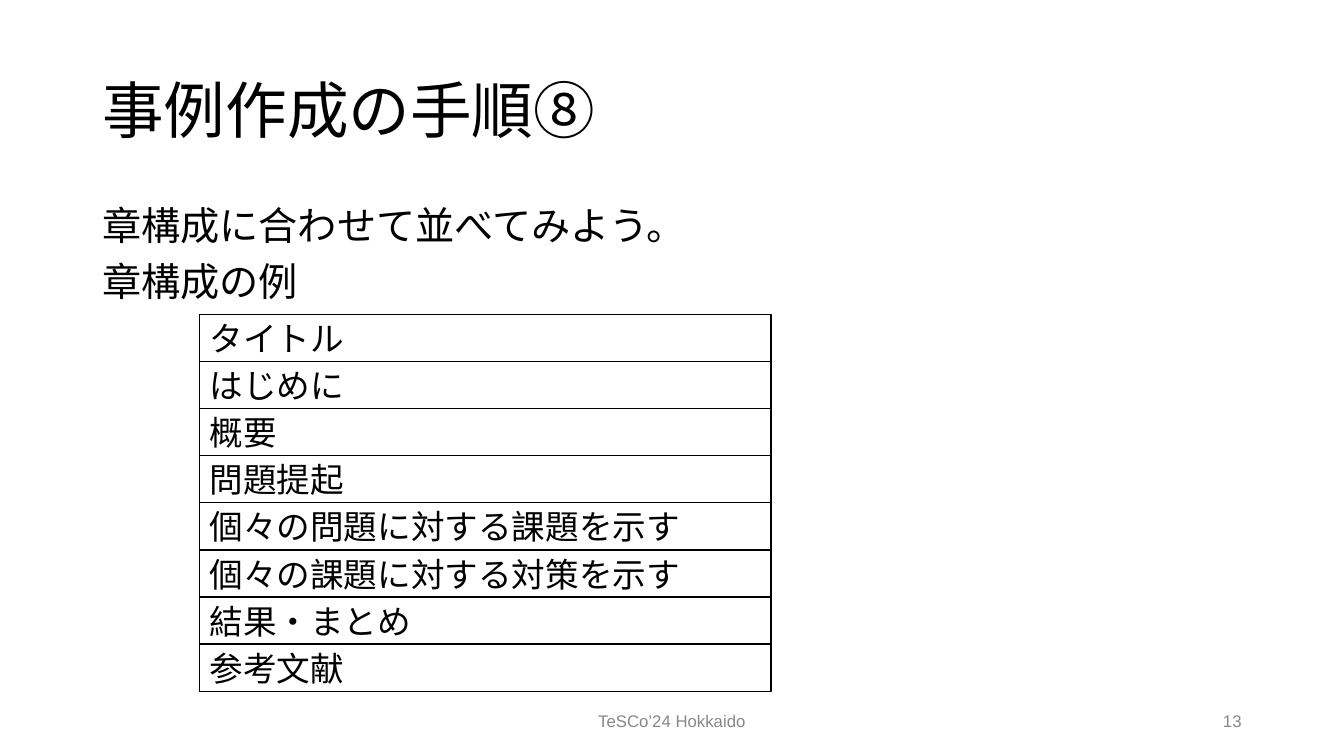
from pptx import Presentation
from pptx.dml.color import RGBColor
from pptx.enum.shapes import MSO_SHAPE
from pptx.enum.text import MSO_ANCHOR, PP_ALIGN
from pptx.util import Pt

LEFT, CENTER, RIGHT = PP_ALIGN.LEFT, PP_ALIGN.CENTER, PP_ALIGN.RIGHT
TOP, MIDDLE = MSO_ANCHOR.TOP, MSO_ANCHOR.MIDDLE
RECTANGLE = MSO_SHAPE.RECTANGLE

# Content
TITLE = "事例作成の手順⑧"
BODY = ["章構成に合わせて並べてみよう。", "章構成の例"]
CHAPTERS = [
    "タイトル",
    "はじめに",
    "概要",
    "問題提起",
    "個々の問題に対する課題を示す",
    "個々の課題に対する対策を示す",
    "結果・まとめ",
    "参考文献",
]
FOOTER = "TeSCo’24 Hokkaido"
PAGE_NUMBER = "13"

COLORS = {"text": "000000", "box": "FFFFFF", "line": "000000", "footer": "888888"}
FONT = "Arial"

# Layout in points
MARGIN, CONTENT_WIDTH = 66, 828
CHAPTER_LEFT, CHAPTER_TOP = 142.56, 224.64
CHAPTER_WIDTH, CHAPTER_HEIGHT, CHAPTER_PITCH = 408.24, 33.84, 33.63
FOOTER_TOP, FOOTER_HEIGHT = 500.4, 28.8


def color(name):
    return RGBColor.from_string(COLORS[name])


def write(shape, lines, size, align=LEFT, anchor=MIDDLE, ink="text",
          line_spacing=1.0, space_before=0):
    frame = shape.text_frame
    frame.text = "\n".join(lines)
    frame.word_wrap = True
    frame.vertical_anchor = anchor
    for index, paragraph in enumerate(frame.paragraphs):
        paragraph.alignment = align
        paragraph.line_spacing = line_spacing
        paragraph.space_before = Pt(space_before if index else 0)
        for run in paragraph.runs:
            run.font.name = FONT
            run.font.size = Pt(size)
            run.font.color.rgb = color(ink)


def add_text(slide, box, lines, size, **style):
    shape = slide.shapes.add_textbox(*map(Pt, box))
    write(shape, lines, size, **style)


def add_chapter(slide, index, name):
    top = CHAPTER_TOP + index * CHAPTER_PITCH
    shape = slide.shapes.add_shape(
        RECTANGLE, Pt(CHAPTER_LEFT), Pt(top), Pt(CHAPTER_WIDTH), Pt(CHAPTER_HEIGHT))
    shape.shadow.inherit = False
    shape.fill.solid()
    shape.fill.fore_color.rgb = color("box")
    shape.line.color.rgb = color("line")
    shape.line.width = Pt(1)
    write(shape, [name], 24)


def main():
    presentation = Presentation()
    presentation.slide_width, presentation.slide_height = Pt(960), Pt(540)
    slide = presentation.slides.add_slide(presentation.slide_layouts[6])

    # Title and introduction
    add_text(slide, (MARGIN, 28.8, CONTENT_WIDTH, 104.4), [TITLE], 44, line_spacing=0.9)
    add_text(slide, (MARGIN, 144, CONTENT_WIDTH, 342.72), BODY, 28,
             anchor=TOP, line_spacing=0.9, space_before=10)

    # Stack of chapters
    for index, name in enumerate(CHAPTERS):
        add_chapter(slide, index, name)

    # Footer
    add_text(slide, (318, FOOTER_TOP, 324, FOOTER_HEIGHT), [FOOTER], 12,
             align=CENTER, ink="footer")
    add_text(slide, (678, FOOTER_TOP, 216, FOOTER_HEIGHT), [PAGE_NUMBER], 12,
             align=RIGHT, ink="footer")

    presentation.save("out.pptx")


if __name__ == "__main__":
    main()
